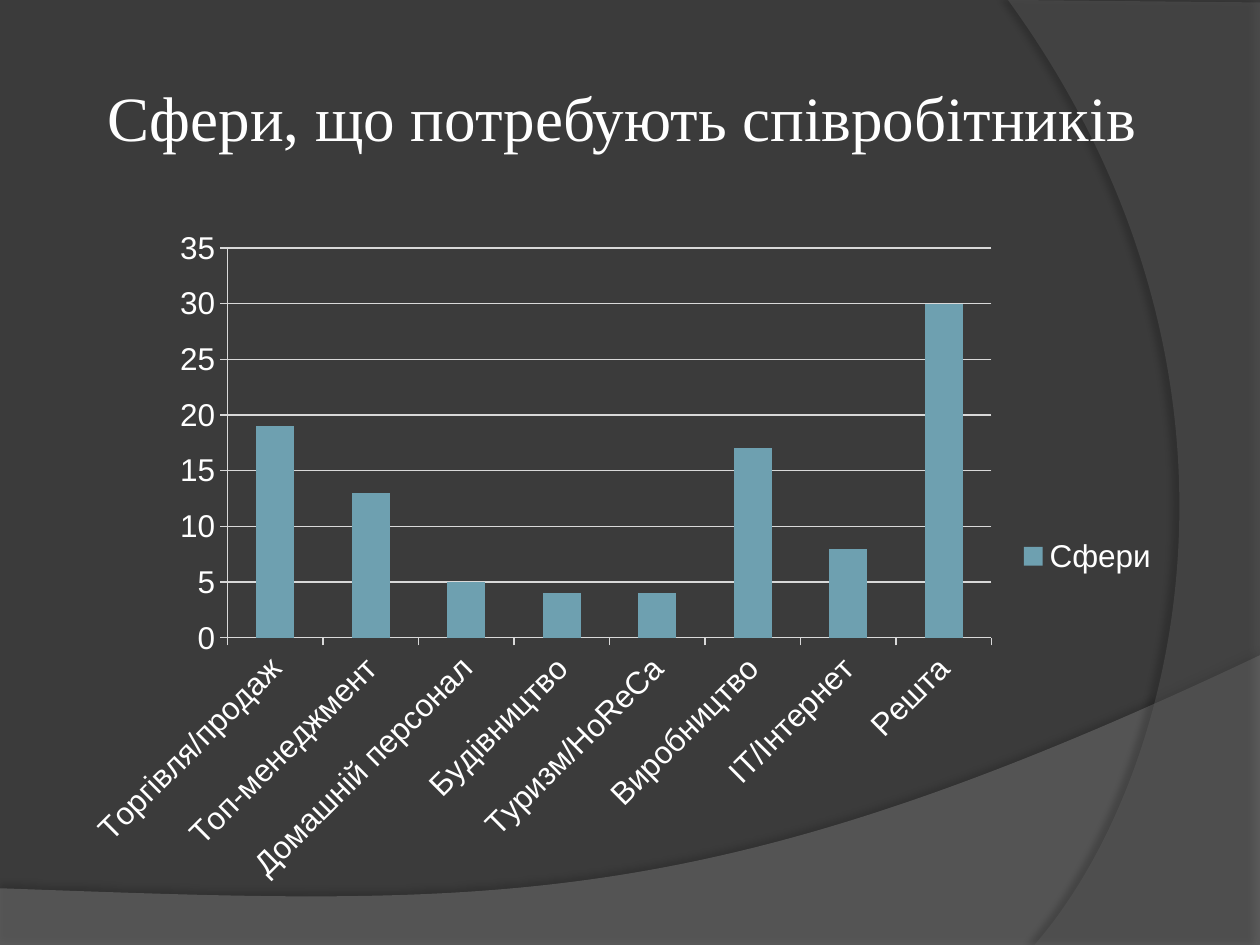
import dataclasses

import lxml.etree
import pptx
import pptx.chart.data
import pptx.dml.color
import pptx.enum.chart
import pptx.enum.text
import pptx.oxml.ns
import pptx.util

Inches = pptx.util.Inches


@dataclasses.dataclass(frozen=True)
class Theme:
    background: str = "3B3B3B"
    wave: str = "7F7F7F"
    arc: str = "5E5E5E"
    shadow: str = "000000"
    text: str = "FFFFFF"
    bar: str = "6EA0B0"
    grid: str = "D9D9D9"
    title_font: str = "Times New Roman"
    chart_font: str = "Arial"
    title_size: int = 36
    chart_size: int = 18
    line_width: float = 0.75


THEME = Theme()

SECTORS = {
    "Торгівля/продаж": 19,
    "Топ-менеджмент": 13,
    "Домашній персонал": 5,
    "Будівництво": 4,
    "Туризм/HoReCa": 4,
    "Виробництво": 17,
    "ІТ/Інтернет": 8,
    "Решта": 30,
}


def rgb(code):
    return pptx.dml.color.RGBColor.from_string(code)


def set_format(target, values):
    for name, value in values.items():
        setattr(target, name, value)


def set_fill(fill, code):
    fill.solid()
    fill.fore_color.rgb = rgb(code)


def set_font(font, name, size):
    set_format(font, {"name": name, "size": pptx.util.Pt(size), "bold": False})
    font.color.rgb = rgb(THEME.text)


def set_line(line):
    line.color.rgb = rgb(THEME.grid)
    line.width = pptx.util.Pt(THEME.line_width)


def add_element(parent, tag, **attributes):
    values = {name: str(value) for name, value in attributes.items()}
    return lxml.etree.SubElement(parent, pptx.oxml.ns.qn(tag), values)


def bend_last_side(band, controls):
    side = band.element.spPr.findall(".//" + pptx.oxml.ns.qn("a:lnTo"))[-1]
    bend = side.makeelement(pptx.oxml.ns.qn("a:cubicBezTo"))
    for x, y in controls:
        add_element(bend, "a:pt", x=Inches(x) - band.left, y=Inches(y) - band.top)
    bend.append(side[0])
    side.getparent().replace(side, bend)


def add_band(slide, corners, controls, color, opacity, shadow_opacity, distance, direction):
    points = [(Inches(x), Inches(y)) for x, y in corners]
    builder = slide.shapes.build_freeform(*points[0])
    builder.add_line_segments(points[1:], close=True)
    band = builder.convert_to_shape()
    bend_last_side(band, controls)
    set_fill(band.fill, color)
    band.line.fill.background()
    band.shadow.inherit = False
    properties = band.element.spPr
    fill_color = properties.find(".//" + pptx.oxml.ns.qn("a:srgbClr"))
    add_element(fill_color, "a:alpha", val=opacity * 1000)
    effects = properties.find(pptx.oxml.ns.qn("a:effectLst"))
    shadow = add_element(
        effects, "a:outerShdw", blurRad=pptx.util.Pt(4), dist=pptx.util.Pt(distance),
        dir=direction * 60000, algn="ctr", rotWithShape=0,
    )
    shadow_color = add_element(shadow, "a:srgbClr", val=THEME.shadow)
    add_element(shadow_color, "a:alpha", val=shadow_opacity * 1000)


def add_title(slide, text):
    box = slide.shapes.add_textbox(Inches(0.5), Inches(0.3), Inches(8.88), Inches(1.25))
    margins = ("margin_left", "margin_top", "margin_right", "margin_bottom")
    set_format(box.text_frame, {
        "word_wrap": True,
        "vertical_anchor": pptx.enum.text.MSO_ANCHOR.MIDDLE,
        **dict.fromkeys(margins, Inches(0.05)),
    })
    para = box.text_frame.paragraphs[0]
    para.alignment = pptx.enum.text.PP_ALIGN.CENTER
    span = para.add_run()
    span.text = text
    set_font(span.font, THEME.title_font, THEME.title_size)


def add_sector_chart(slide, series_name, sectors):
    data = pptx.chart.data.CategoryChartData()
    data.categories = list(sectors)
    data.add_series(series_name, list(sectors.values()))
    chart = slide.shapes.add_chart(
        pptx.enum.chart.XL_CHART_TYPE.COLUMN_STACKED,
        Inches(0.55), Inches(1.72), Inches(8.75), Inches(5.39), data,
    ).chart
    set_format(chart, {"has_title": False, "has_legend": True})
    set_font(chart.font, THEME.chart_font, THEME.chart_size)
    set_format(chart.legend, {
        "position": pptx.enum.chart.XL_LEGEND_POSITION.RIGHT,
        "include_in_layout": False,
    })
    plot = chart.plots[0]
    set_format(plot, {"gap_width": 150, "overlap": 100, "vary_by_categories": False})
    set_fill(plot.series[0].format.fill, THEME.bar)
    for axis in (chart.category_axis, chart.value_axis):
        axis.major_tick_mark = pptx.enum.chart.XL_TICK_MARK.OUTSIDE
        set_line(axis.format.line)
    set_format(chart.value_axis, {
        "minimum_scale": 0, "maximum_scale": 35, "major_unit": 5,
        "has_major_gridlines": True,
    })
    set_line(chart.value_axis.major_gridlines.format.line)


def main():
    deck = pptx.Presentation()
    set_format(deck, {"slide_width": Inches(10), "slide_height": Inches(7.5)})
    page = deck.slides.add_slide(deck.slide_layouts[6])
    set_fill(page.background.fill, THEME.background)
    wave = [(0, 7.05), (0, 7.51), (10, 7.51), (10, 5.2), (0, 7.05)]
    add_band(page, wave, [(5.59, 7.29), (3.91, 7.19)], THEME.wave, 45, 35, 3.5, 270)
    arc = [(10, 0.02), (10, 7.5), (8.21, 7.5), (8, 0)]
    add_band(page, arc, [(9.35, 6.19), (10.18, 3)], THEME.arc, 40, 45, 4, 180)
    add_title(page, "Сфери, що потребують співробітників")
    add_sector_chart(page, "Сфери", SECTORS)
    deck.save("out.pptx")


if __name__ == "__main__":
    main()
